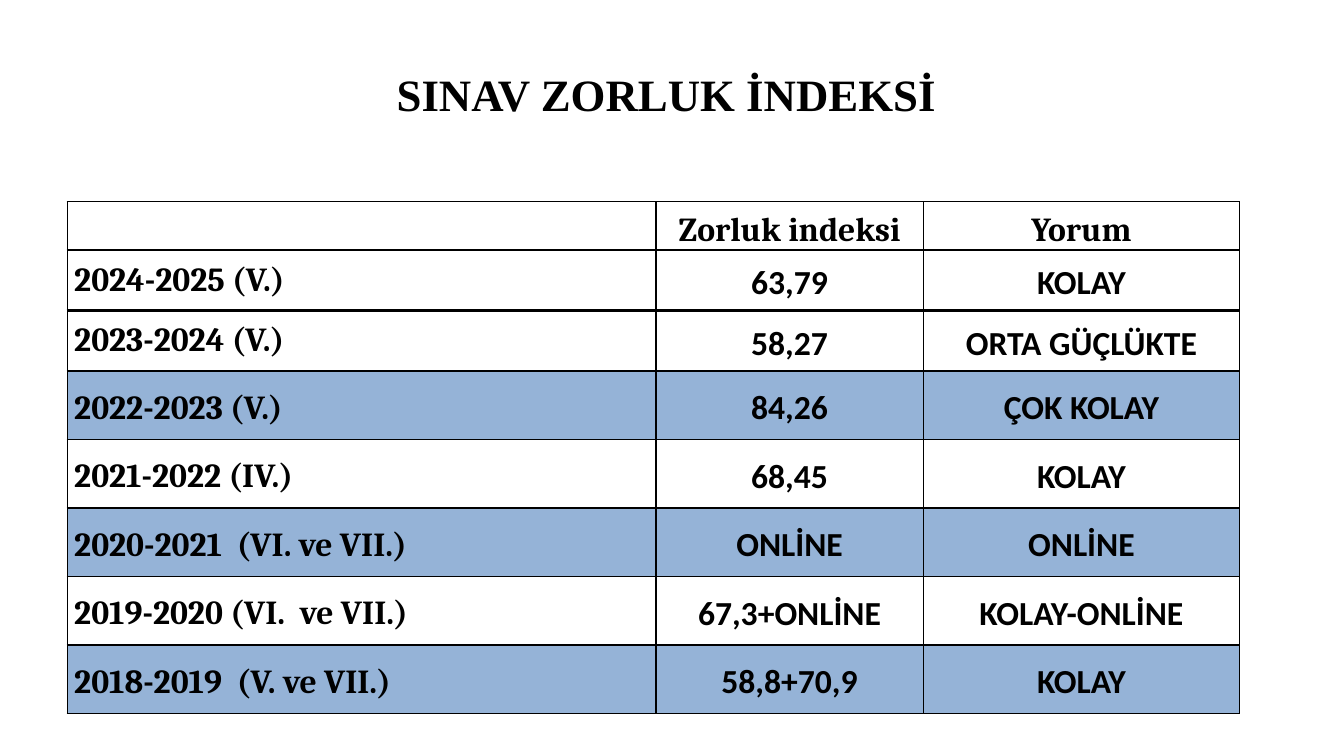
import pptx
import pptx.dml.color
import pptx.enum.text
import pptx.oxml
import pptx.oxml.ns
import pptx.util

SLIDE_WIDTH, SLIDE_HEIGHT = 13.33, 7.5
BLACK, WHITE, BLUE = "000000", "FFFFFF", "95B3D7"
THIN, THICK = 1, 2.25
COLUMN_WIDTHS = [5.84, 2.65, 3.14]
ROW_HEIGHTS = [0.48] + [0.6] * 2 + [0.68] * 5
EXAM_ROWS = [
    ("", "Zorluk indeksi", "Yorum"),
    ("2024-2025 (V.)", "63,79", "KOLAY"),
    ("2023-2024 (V.)", "58,27", "ORTA GÜÇLÜKTE"),
    ("2022-2023 (V.)", "84,26", "ÇOK KOLAY"),
    ("2021-2022 (IV.)", "68,45", "KOLAY"),
    ("2020-2021  (VI. ve VII.)", "ONLİNE", "ONLİNE"),
    ("2019-2020 (VI.  ve VII.)", "67,3+ONLİNE", "KOLAY-ONLİNE"),
    ("2018-2019  (V. ve VII.)", "58,8+70,9", "KOLAY"),
]
CENTER = pptx.enum.text.PP_ALIGN.CENTER
LEFT = pptx.enum.text.PP_ALIGN.LEFT
MIDDLE = pptx.enum.text.MSO_ANCHOR.MIDDLE
BOTTOM = pptx.enum.text.MSO_ANCHOR.BOTTOM


def color(hex_value):
    return pptx.dml.color.RGBColor.from_string(hex_value)


def inches(*lengths):
    return [pptx.util.Inches(length) for length in lengths]


def style_paragraph(paragraph, font_name, size, alignment):
    paragraph.alignment = alignment
    paragraph.font.name = font_name
    paragraph.font.size = pptx.util.Pt(size)
    paragraph.font.bold = True
    paragraph.font.color.rgb = color(BLACK)


def add_title(slide, text, left, top, width, height):
    frame = slide.shapes.add_textbox(*inches(left, top, width, height)).text_frame
    frame.word_wrap = True
    frame.vertical_anchor = MIDDLE
    frame.text = text
    style_paragraph(frame.paragraphs[0], "Times New Roman", 32, CENTER)


def set_borders(cell, top, bottom):
    """Draw all four cell edges; top and bottom are widths in points."""
    properties = cell._tc.get_or_add_tcPr()
    edges = [("lnL", THIN), ("lnR", THIN), ("lnT", top), ("lnB", bottom)]
    for position, (tag, width) in enumerate(edges):
        line = pptx.oxml.parse_xml(
            f'<a:{tag} {pptx.oxml.ns.nsdecls("a")} w="{pptx.util.Pt(width)}">'
            f'<a:solidFill><a:srgbClr val="{BLACK}"/></a:solidFill></a:{tag}>')
        properties.insert(position, line)


def fill_cell(cell, text, row, column):
    cell.text = text
    cell.margin_left = cell.margin_right = pptx.util.Inches(0.07)
    cell.margin_top = cell.margin_bottom = 0
    cell.vertical_anchor = MIDDLE if row else BOTTOM
    paragraph = cell.text_frame.paragraphs[0]
    serif = row == 0 or column == 0
    style_paragraph(paragraph, "Cambria" if serif else "Calibri", 24,
                    CENTER if column else LEFT)
    if column or row > 2:
        paragraph.line_spacing = 1.15
    cell.fill.solid()
    cell.fill.fore_color.rgb = color(BLUE if row >= 3 and row % 2 else WHITE)
    set_borders(cell, THICK if row in (1, 2) else THIN, THICK if row < 2 else THIN)


def add_exam_table(slide, left, top):
    box = inches(left, top, sum(COLUMN_WIDTHS), sum(ROW_HEIGHTS))
    table = slide.shapes.add_table(len(EXAM_ROWS), len(COLUMN_WIDTHS), *box).table
    table.first_row = table.horz_banding = False
    for column, width in zip(table.columns, inches(*COLUMN_WIDTHS)):
        column.width = width
    for row, height in zip(table.rows, inches(*ROW_HEIGHTS)):
        row.height = height
    for row, texts in enumerate(EXAM_ROWS):
        for column, text in enumerate(texts):
            fill_cell(table.cell(row, column), text, row, column)


def main():
    presentation = pptx.Presentation()
    presentation.slide_width, presentation.slide_height = inches(SLIDE_WIDTH, SLIDE_HEIGHT)
    slide = presentation.slides.add_slide(presentation.slide_layouts[6])
    margin = SLIDE_WIDTH * 0.05
    add_title(slide, "SINAV ZORLUK İNDEKSİ ", margin, SLIDE_HEIGHT * 0.04,
              SLIDE_WIDTH * 0.9, SLIDE_HEIGHT / 6)
    add_exam_table(slide, margin, 2)
    presentation.save("out.pptx")


if __name__ == "__main__":
    main()
